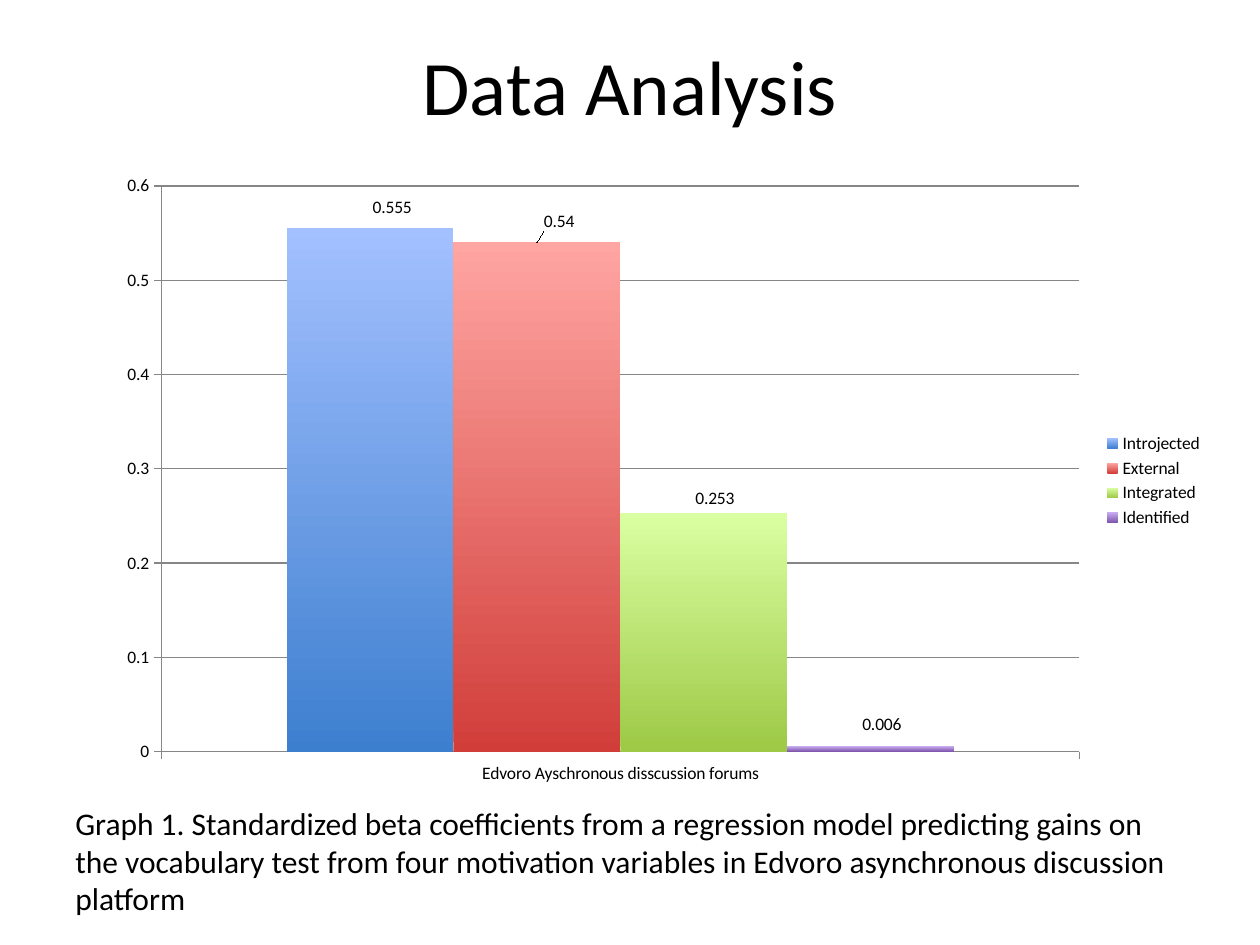
import lxml.etree
import pptx
import pptx.chart.data
import pptx.dml.color
import pptx.enum.chart
import pptx.enum.text
import pptx.oxml.ns
import pptx.util

FONT = "Calibri"
INK = "000000"
AXIS_GREY = "868686"
FORUM = "Edvoro Ayschronous disscussion forums"
CAPTION = (
    "Graph 1. Standardized beta coefficients from a regression model predicting gains on "
    "the vocabulary test from four motivation variables in Edvoro asynchronous discussion platform"
)
MOTIVATIONS = [
    ("Introjected", 0.555, "A3C0FF", "3D7FCF", (0.02, -0.01)),
    ("External", 0.54, "FFA5A2", "D13E3A", (0.02, -0.01)),
    ("Integrated", 0.253, "DAFFA2", "9DC946", (0.01, 0)),
    ("Identified", 0.006, "C9ACF2", "7C55AB", (0.01, -0.01)),
]


def colour(value):
    return pptx.dml.color.RGBColor.from_string(value)


def style_font(font, size):
    font.name = FONT
    font.size = pptx.util.Pt(size)
    font.color.rgb = colour(INK)


def manual_layout(**settings):
    tag = pptx.oxml.ns.qn
    layout = lxml.etree.Element(tag("c:layout"))
    manual = lxml.etree.SubElement(layout, tag("c:manualLayout"))
    for name, value in settings.items():
        lxml.etree.SubElement(manual, tag(f"c:{name}")).set("val", str(value))
    return layout


def place_text(slide, box, wording, size, align, anchor):
    frame = slide.shapes.add_textbox(*box).text_frame
    frame.word_wrap = True
    frame.vertical_anchor = anchor
    paragraph = frame.paragraphs[0]
    paragraph.alignment = align
    run = paragraph.add_run()
    run.text = wording
    style_font(run.font, size)


def place_title(slide, box):
    place_text(slide, box, "Data Analysis", 44,
               pptx.enum.text.PP_ALIGN.CENTER, pptx.enum.text.MSO_ANCHOR.MIDDLE)


def place_caption(slide, box):
    place_text(slide, box, CAPTION, 18,
               pptx.enum.text.PP_ALIGN.LEFT, pptx.enum.text.MSO_ANCHOR.TOP)


def style_axis(axis):
    axis.major_tick_mark = pptx.enum.chart.XL_TICK_MARK.OUTSIDE
    axis.minor_tick_mark = pptx.enum.chart.XL_TICK_MARK.NONE
    axis.format.line.color.rgb = colour(AXIS_GREY)
    axis.format.line.width = pptx.util.Pt(0.75)
    style_font(axis.tick_labels.font, 10)


def style_bar(series, top, bottom, label_shift):
    fill = series.format.fill
    fill.gradient()
    fill.gradient_angle = 90
    for stop, shade, position in zip(fill.gradient_stops, (bottom, top), (0, 1)):
        stop.color.rgb = colour(shade)
        stop.position = position
    series.format.line.fill.background()
    series.invert_if_negative = False

    value_label = series.points[0].data_label
    value_label.position = pptx.enum.chart.XL_LABEL_POSITION.OUTSIDE_END
    style_font(value_label.font, 10)
    labels = series.data_labels
    labels.show_value = True
    style_font(labels.font, 10)
    x, y = label_shift
    index = labels._element.find(".//" + pptx.oxml.ns.qn("c:idx"))
    index.addnext(manual_layout(x=x, y=y))


def place_coefficients(slide, box):
    coefficients = pptx.chart.data.CategoryChartData()
    coefficients.categories = [FORUM]
    for name, beta, *_ in MOTIVATIONS:
        coefficients.add_series(name, [beta])
    chart = slide.shapes.add_chart(
        pptx.enum.chart.XL_CHART_TYPE.COLUMN_CLUSTERED, *box, coefficients).chart
    style_font(chart.font, 10)
    chart.has_title = False
    chart.has_legend = True
    chart.legend.position = pptx.enum.chart.XL_LEGEND_POSITION.RIGHT
    chart.legend.include_in_layout = False
    style_font(chart.legend.font, 10)

    style_axis(chart.category_axis)
    betas = chart.value_axis
    style_axis(betas)
    betas.minimum_scale, betas.maximum_scale, betas.major_unit = 0, 0.6, 0.1
    betas.has_major_gridlines = True
    betas.major_gridlines.format.line.color.rgb = colour(AXIS_GREY)
    betas.major_gridlines.format.line.width = pptx.util.Pt(0.75)

    plot = chart.plots[0]
    plot.gap_width = 150
    plot.overlap = 0
    plot.vary_by_categories = False
    for series, (_, _, top, bottom, shift) in zip(plot.series, MOTIVATIONS):
        style_bar(series, top, bottom, shift)

    area = plot._element.getparent()
    for layout in area.findall(pptx.oxml.ns.qn("c:layout")):
        area.remove(layout)
    area.insert(0, manual_layout(layoutTarget="inner", xMode="edge", yMode="edge",
                                 x=0.05, y=0.035, w=0.827, h=0.893))


def main():
    deck = pptx.Presentation()
    deck.slide_width = pptx.util.Inches(10)
    deck.slide_height = pptx.util.Inches(7.5)
    slide = deck.slides.add_slide(deck.slide_layouts[6])

    def region(left, top, width, height):
        return (int(left * deck.slide_width), int(top * deck.slide_height),
                int(width * deck.slide_width), int(height * deck.slide_height))

    place_title(slide, region(0.05, 0.05 / 7.5, 0.9, 1.25 / 7.5))
    place_coefficients(slide, region(0.084, 1.3 / 7.5, 0.881, 5.03 / 7.5))
    place_caption(slide, region(0.05, 6.33 / 7.5, 0.9, 1.01 / 7.5))
    deck.save("out.pptx")


if __name__ == "__main__":
    main()
